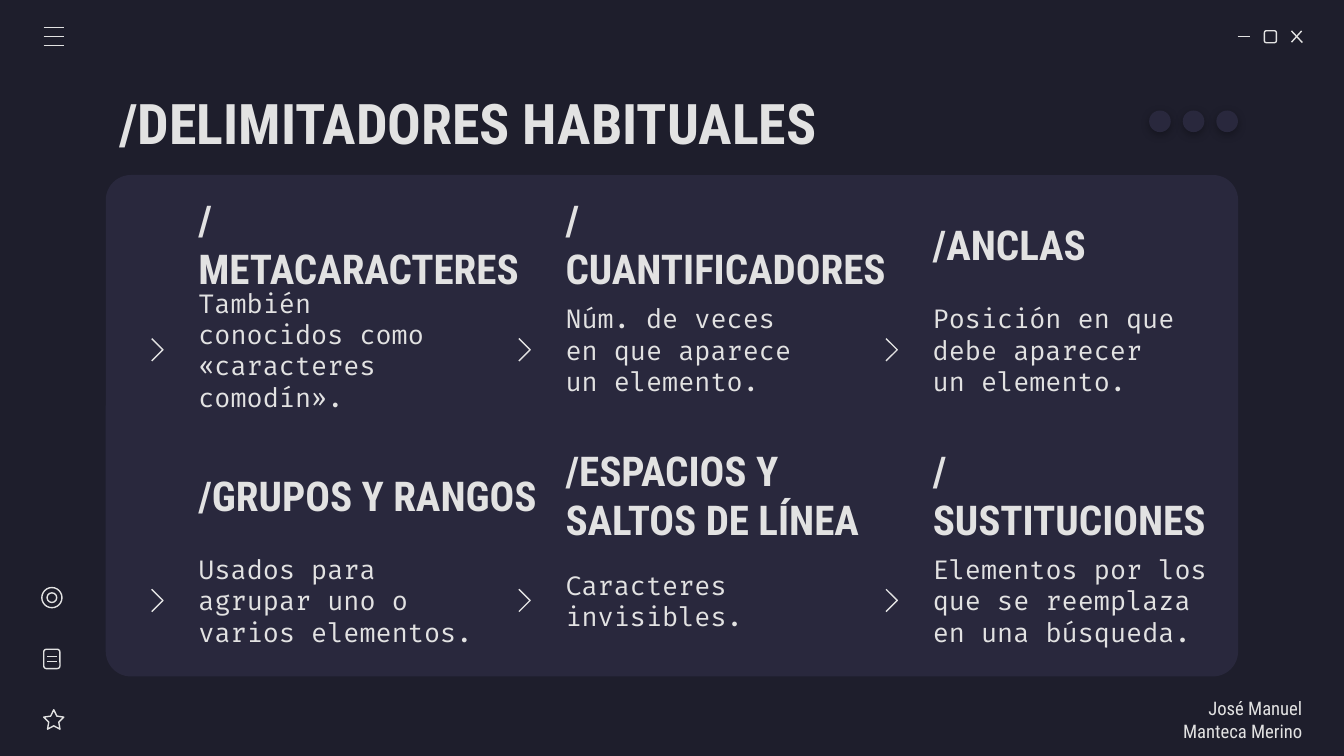
from dataclasses import dataclass

from lxml import etree
from pptx import Presentation
from pptx.dml.color import RGBColor
from pptx.enum import shapes, text
from pptx.oxml import ns
from pptx.util import Pt

KIND = shapes.MSO_SHAPE
ALIGN = text.PP_ALIGN


@dataclass(frozen=True)
class Theme:
    background: RGBColor = RGBColor.from_string("1E1E2C")
    panel: RGBColor = RGBColor.from_string("29283D")
    ink: RGBColor = RGBColor.from_string("E2E2E2")
    shadow: str = "000000"
    display: str = "Roboto Condensed"
    mono: str = "Fira Code"
    title_size: float = 30
    heading_size: float = 22
    body_size: float = 14
    credit_size: float = 10
    stroke: float = 0.75


THEME = Theme()

# Card grid: origin, steps, and offsets inside a card
GRID_X, GRID_Y = 99.2, 106.6
STEP_X, STEP_Y = 196.7, 134.3
BODY_DROP, CHEVRON_DROP, CHEVRON_SHIFT = 52.7, 74.8, -17.9

# Rows of (heading, heading width, body, body width)
CARDS = [
    [
        ("/METACARACTERES", 190.8, "También conocidos como «caracteres comodín».", 144),
        ("/CUANTIFICADORES", 190.8, "Núm. de veces en que aparece un elemento.", 144),
        ("/ANCLAS", 144, "Posición en que debe aparecer un elemento.", 144),
    ],
    [
        ("/GRUPOS Y RANGOS", 196.6, "Usados para agrupar uno o varios elementos.", 162),
        ("/ESPACIOS Y SALTOS DE LÍNEA", 174.2, "Caracteres invisibles.", 144),
        ("/SUSTITUCIONES", 164.9, "Elementos por los que se reemplaza en una búsqueda.", 164.9),
    ],
]


def write(box, words, size, font, bold=False, align=ALIGN.LEFT, right_inset=7.2):
    frame = box.text_frame
    frame.word_wrap = True
    frame.auto_size = text.MSO_AUTO_SIZE.NONE
    frame.vertical_anchor = text.MSO_ANCHOR.MIDDLE
    frame.margin_left = frame.margin_top = frame.margin_bottom = Pt(7.2)
    frame.margin_right = Pt(right_inset)
    para = frame.paragraphs[0]
    para.alignment = align
    span = para.add_run()
    span.text = words
    span.font.size = Pt(size)
    span.font.name = font
    span.font.bold = bold
    span.font.color.rgb = THEME.ink


def add_text(page, left, top, width, height, words, size, font, **style):
    box = page.shapes.add_textbox(Pt(left), Pt(top), Pt(width), Pt(height))
    write(box, words, size, font, **style)


def stroke(item):
    item.line.color.rgb = THEME.ink
    item.line.width = Pt(THEME.stroke)


def add_filled(parent, kind, left, top, width, height):
    shape = parent.shapes.add_shape(kind, Pt(left), Pt(top), Pt(width), Pt(height))
    shape.shadow.inherit = False
    shape.fill.solid()
    shape.fill.fore_color.rgb = THEME.panel
    shape.line.fill.background()
    return shape


def add_outline(parent, kind, left, top, width, height):
    shape = parent.shapes.add_shape(kind, Pt(left), Pt(top), Pt(width), Pt(height))
    shape.shadow.inherit = False
    shape.fill.background()
    stroke(shape)
    return shape


def add_line(parent, x1, y1, x2, y2):
    line = parent.shapes.add_connector(
        shapes.MSO_CONNECTOR.STRAIGHT, Pt(x1), Pt(y1), Pt(x2), Pt(y2))
    stroke(line)
    etree.SubElement(line._element.spPr, ns.qn("a:effectLst"))


def add_chevron(page, left, top):
    builder = page.shapes.build_freeform(Pt(left), Pt(top))
    builder.add_line_segments(
        [(Pt(left + 6), Pt(top + 6)), (Pt(left), Pt(top + 12))], close=False)
    shape = builder.convert_to_shape()
    shape.shadow.inherit = False
    shape.fill.background()
    stroke(shape)


def add_soft_shadow(shape):
    effects = shape._element.spPr.find(ns.qn("a:effectLst"))
    outer = etree.SubElement(
        effects, ns.qn("a:outerShdw"), blurRad=str(Pt(4.5)), dist=str(Pt(1.5)),
        dir="5400000", algn="bl", rotWithShape="0")
    color = etree.SubElement(outer, ns.qn("a:srgbClr"), val=THEME.shadow)
    etree.SubElement(color, ns.qn("a:alpha"), val="30000")


def add_window_controls(page):
    group = page.shapes.add_group_shape()
    add_line(group, 663.1, 19.6, 669.6, 19.6)
    add_outline(group, KIND.ROUNDED_RECTANGLE, 677.4, 16.5, 6.4, 6.4)
    add_line(group, 691.9, 16.6, 697.7, 22.8)
    add_line(group, 697.3, 16.6, 691.9, 22.6)


def add_menu(page):
    group = page.shapes.add_group_shape()
    for y in (14.9, 19.7, 24.5):
        add_line(group, 23.4, y, 34.2, y)


def add_side_icons(page):
    group = page.shapes.add_group_shape()
    star = add_outline(group, KIND.STAR_5_POINT, 23.4, 380.2, 10.8, 10.4)
    for index, value in enumerate((0.25, 1.05, 1.11)):
        star.adjustments[index] = value
    add_outline(group, KIND.ROUNDED_RECTANGLE, 23.4, 347.8, 8.7, 10.4)
    for y in (351.6, 354.3):
        add_line(group, 25.2, y, 30.3, y)
    add_outline(group, KIND.OVAL, 22.4, 314.8, 10.8, 10.8)
    add_outline(group, KIND.OVAL, 25.2, 317.6, 5.2, 5.2)


def add_dots(page):
    group = page.shapes.add_group_shape()
    for index in range(3):
        dot = add_filled(group, KIND.OVAL, 615.6 + 18 * index, 59.2, 11.6, 11.6)
        add_soft_shadow(dot)


def add_card(page, left, top, heading, heading_width, body, body_width):
    add_text(page, left, top, heading_width, 48.2, heading,
             THEME.heading_size, THEME.display, bold=True)
    add_text(page, left, top + BODY_DROP, body_width, 56.2, body,
             THEME.body_size, THEME.mono)
    add_chevron(page, left + CHEVRON_SHIFT, top + CHEVRON_DROP)


def main():
    deck = Presentation()
    deck.slide_width, deck.slide_height = Pt(720), Pt(405)
    page = deck.slides.add_slide(deck.slide_layouts[5])
    page.background.fill.solid()
    page.background.fill.fore_color.rgb = THEME.background

    # Panel and window decoration
    panel = add_filled(page, KIND.ROUNDED_RECTANGLE, 56.7, 93.8, 606.6, 268.6)
    panel.adjustments[0] = 0.05
    add_window_controls(page)
    add_menu(page)
    add_side_icons(page)
    add_dots(page)

    # Title
    title = page.shapes.title
    title.left, title.top, title.width, title.height = map(Pt, (56.7, 42.5, 606.6, 45.4))
    write(title, "/DELIMITADORES HABITUALES", THEME.title_size, THEME.display, bold=True)

    # Cards
    for row, cards in enumerate(CARDS):
        for column, card in enumerate(cards):
            add_card(page, GRID_X + STEP_X * column, GRID_Y + STEP_Y * row, *card)

    # Credit
    add_text(page, 613.4, 374.6, 84.2, 21.6, "José Manuel Manteca Merino",
             THEME.credit_size, THEME.display, align=ALIGN.RIGHT, right_inset=0)

    deck.save("out.pptx")


if __name__ == "__main__":
    main()
